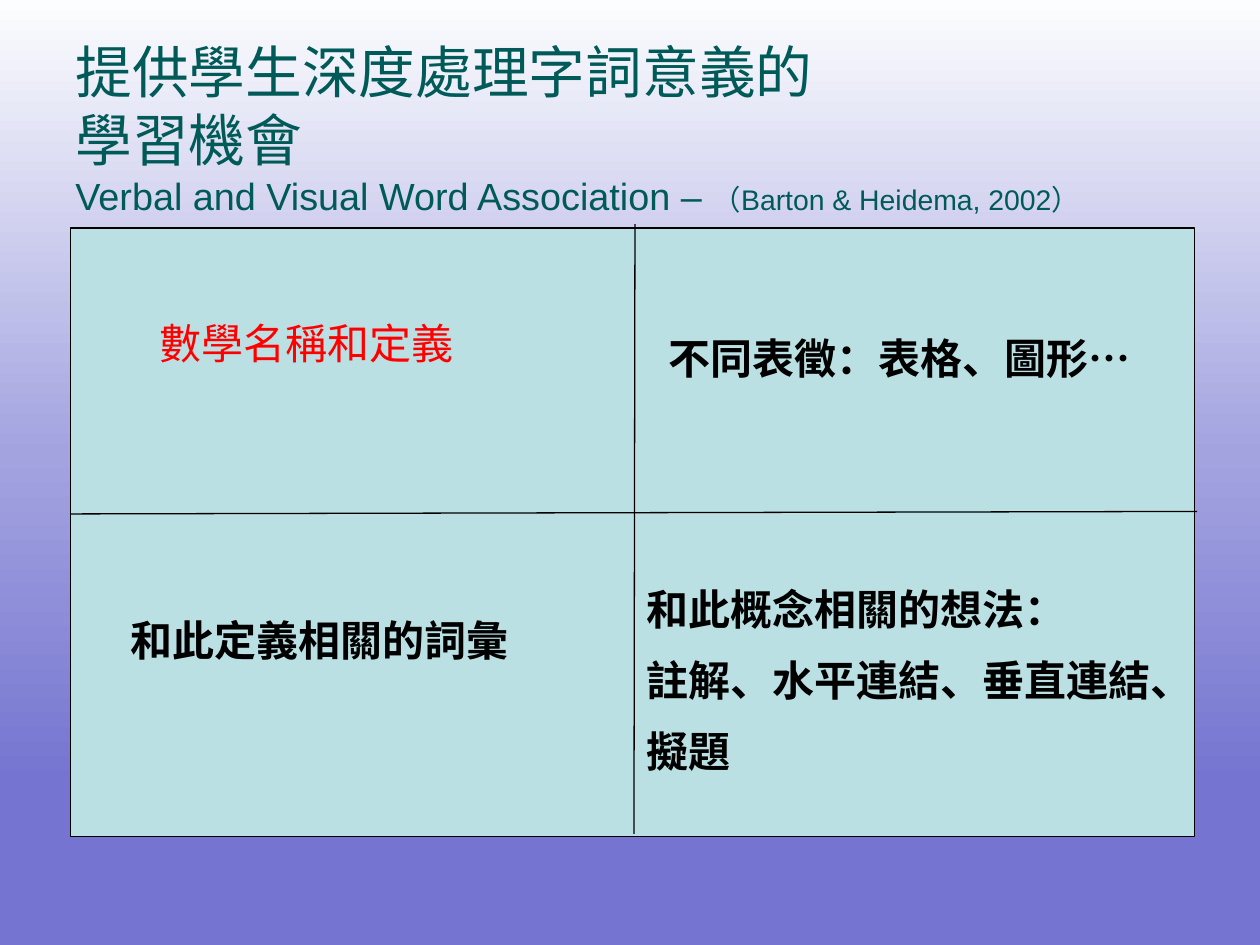
from copy import deepcopy

from lxml import etree
from pptx import Presentation
from pptx.dml.color import RGBColor
from pptx.enum.shapes import MSO_CONNECTOR, MSO_SHAPE
from pptx.enum.text import MSO_ANCHOR
from pptx.oxml.ns import qn
from pptx.util import Cm, Pt

RECT, STRAIGHT = MSO_SHAPE.RECTANGLE, MSO_CONNECTOR.STRAIGHT
TOP, MIDDLE = MSO_ANCHOR.TOP, MSO_ANCHOR.MIDDLE

# Content: lengths in cm, text sizes in points
FONT, BLACK, RED, TEAL, PANEL = "Arial", "000000", "FF0000", "005A58", "BBE0E3"
BACKGROUND = [(0, "FCFDFE"), (0.48, "A3A3E0"), (0.83, "7575D1")]

TITLE_BOX = (1.27, 0.76, 22.86, 3.61)
TITLE = [
    [("提供學生深度處理字詞意義的", 32.4)],
    [("學習機會", 32.4)],
    [("Verbal and Visual Word Association – ", 21.6),
     ("（Barton & Heidema, 2002）", 16.2)],
]

PANEL_BOX = (1.42, 4.6, 22.66, 12.27)
DIVIDERS = [(12.8, 4.52, 12.78, 16.81), (1.42, 10.36, 24.13, 10.31)]
QUADRANTS = [
    ((2.39, 12.27, 8.61, 1.27), ["和此定義相關的詞彙"], BLACK, True),
    ((13.23, 6.58, 9.93, 1.27), ["不同表徵：表格、圖形…"], BLACK, True),
    ((2.97, 6.27, 7.19, 1.27), ["數學名稱和定義"], RED, False),
    ((12.78, 11.63, 10.8, 4.37),
     ["和此概念相關的想法：", "註解、水平連結、垂直連結、", "擬題"], BLACK, True),
]


def rgb(value):
    return RGBColor.from_string(value)


def cm(lengths):
    return [Cm(v) for v in lengths]


def add_text(p, text, size=24, color=BLACK, bold=False):
    r = p.add_run()
    r.text = text
    r.font.name, r.font.size, r.font.bold = FONT, Pt(size), bold
    r.font.color.rgb = rgb(color)


def add_box(s, box, anchor=TOP):
    tf = s.shapes.add_textbox(*cm(box)).text_frame
    tf.word_wrap = True
    tf.vertical_anchor = anchor
    return tf


def set_line(line):
    line.color.rgb = rgb(BLACK)
    line.width = Pt(0.75)


prs = Presentation()
prs.slide_width, prs.slide_height = Cm(25.4), Cm(19.05)
s = prs.slides.add_slide(prs.slide_layouts[6])

# Background gradient, top to bottom
fill = s.background.fill
fill.gradient()
fill.gradient_angle = 270
stops = fill.gradient_stops
last = stops[1]._gs
last.addnext(deepcopy(last))
for stop, (position, color) in zip(fill.gradient_stops, BACKGROUND):
    stop.position = position
    stop.color.rgb = rgb(color)

# Title
p = add_box(s, TITLE_BOX, MIDDLE).paragraphs[0]
for i, line in enumerate(TITLE):
    if i:
        p.add_line_break()
    for text, size in line:
        add_text(p, text, size=size, color=TEAL)

# Panel and its dividers
panel = s.shapes.add_shape(RECT, *cm(PANEL_BOX))
panel.shadow.inherit = False
panel.fill.solid()
panel.fill.fore_color.rgb = rgb(PANEL)
set_line(panel.line)
for ends in DIVIDERS:
    divider = s.shapes.add_connector(STRAIGHT, *cm(ends))
    set_line(divider.line)
    etree.SubElement(divider._element.spPr, qn("a:effectLst"))

# Quadrant texts
for box, lines, color, bold in QUADRANTS:
    tf = add_box(s, box)
    for i, text in enumerate(lines):
        p = tf.add_paragraph() if i else tf.paragraphs[0]
        p.space_before = Pt(12 if i else 0)
        add_text(p, text, color=color, bold=bold)

prs.save("out.pptx")
